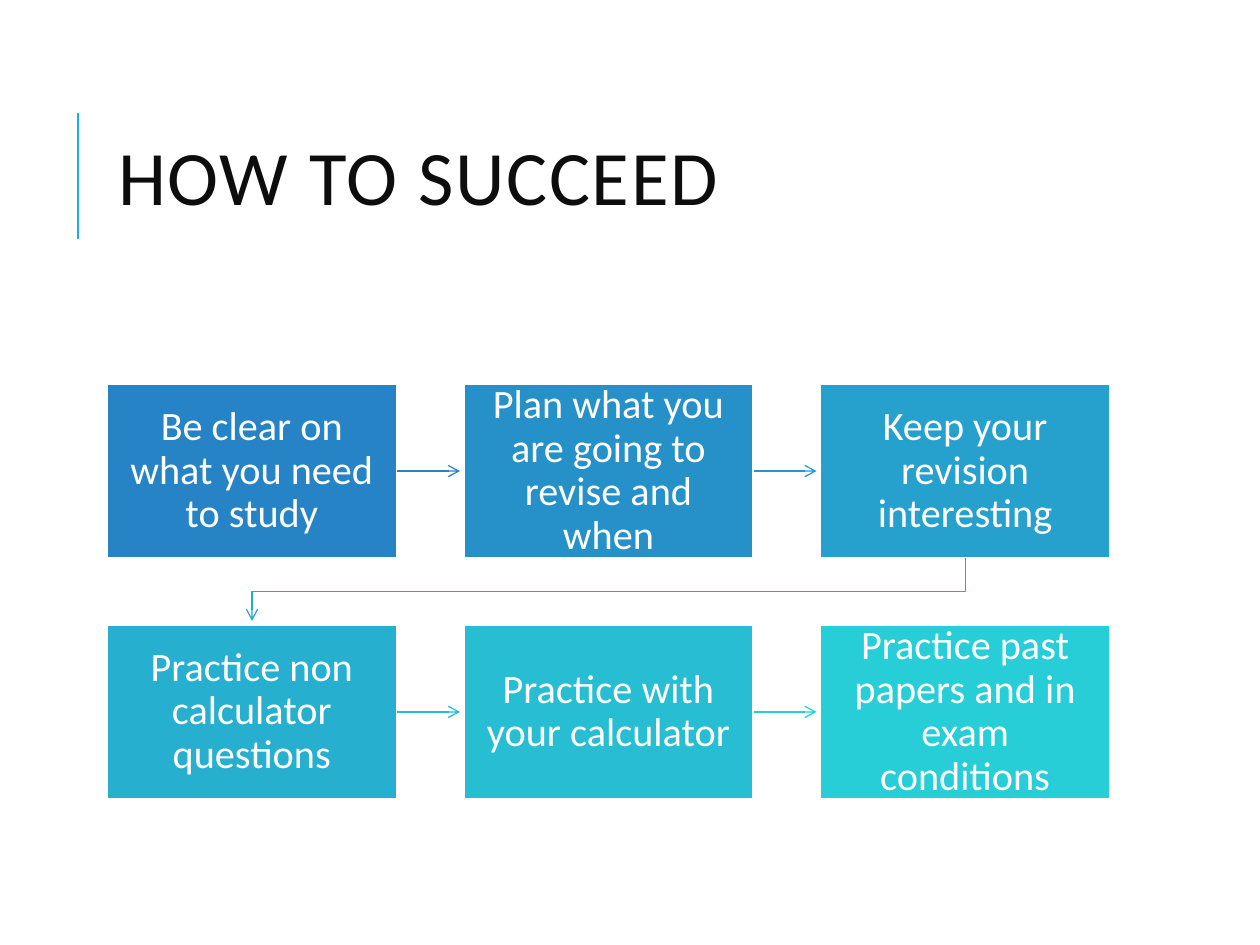
"""Build a slide with a title and six study steps joined by arrows."""
from dataclasses import dataclass

from lxml import etree
from pptx import Presentation
from pptx import util as u
from pptx.dml.color import RGBColor
from pptx.enum import shapes, text
from pptx.oxml.ns import qn

LEFT, TOP = 61.2, 219.6
WIDE, HIGH = 165.6, 99.2
STEP_X, STEP_Y = 203.8, 137.6
COLS = 3
REACH = 36


@dataclass(frozen=True)
class Step:
    words: str
    fill: str
    link: str = ""


STEPS = [
    Step("Be clear on what you need to study", "2683C6", "2683C6"),
    Step("Plan what you are going to revise and when", "2691C9", "2695CA"),
    Step("Keep your revision interesting", "26A0CD", "27A7CE"),
    Step("Practice non calculator questions", "27AFD0", "27BAD3"),
    Step("Practice with your calculator", "27BED4", "27CED7"),
    Step("Practice past papers and in exam conditions", "27CED7"),
]


def paint(part, shade: str) -> None:
    if hasattr(part, "solid"):
        part.solid()
        part.fore_color.rgb = RGBColor.from_string(shade)
    else:
        part.rgb = RGBColor.from_string(shade)


def write(frame, words: str, size: float, shade: str, space: float):
    frame.word_wrap = True
    frame.vertical_anchor = text.MSO_ANCHOR.MIDDLE
    frame.text = words
    para = frame.paragraphs[0]
    para.line_spacing = space
    font = para.runs[0].font
    font.name, font.size = "Calibri", u.Pt(size)
    paint(font.color, shade)
    return para


def stroke(item, shade: str, width: float, head: bool = False) -> None:
    paint(item.line.fill, shade)
    item.line.width = u.Pt(width)
    if head:
        etree.SubElement(item.line._get_or_add_ln(), qn("a:tailEnd"), type="arrow")


def join(slide, x1: float, y1: float, x2: float, y2: float):
    line = slide.shapes.add_connector(
        shapes.MSO_CONNECTOR.STRAIGHT, u.Pt(x1), u.Pt(y1), u.Pt(x2), u.Pt(y2))
    etree.SubElement(line._element.spPr, qn("a:effectLst"))
    return line


def add_title(slide) -> None:
    stroke(join(slide, 44.64, 136.8, 44.64, 64.8), "1CADE4", 1.5)
    box = slide.shapes.add_textbox(u.Pt(60.5), u.Pt(46), u.Pt(574), u.Pt(118))
    para = write(box.text_frame, "HOW TO SUCCEED", 44, "0D0D0D", 0.8)
    para.runs[0].font._element.set("spc", "100")


def add_box(slide, step: Step, x: float, y: float):
    box = slide.shapes.add_shape(
        shapes.MSO_SHAPE.RECTANGLE, u.Pt(x), u.Pt(y), u.Pt(WIDE), u.Pt(HIGH))
    box.shadow.inherit = False
    paint(box.fill, step.fill)
    stroke(box, "FFFFFF", 1.25)
    frame = box.text_frame
    frame.margin_left = frame.margin_right = u.Pt(8)
    frame.margin_top = frame.margin_bottom = u.Pt(8.5)
    para = write(frame, step.words, 23, "FFFFFF", 0.9)
    para.alignment = text.PP_ALIGN.CENTER
    return box


def add_link(slide, box, shade: str, x: float, y: float) -> None:
    edge, mid = x + WIDE, y + HIGH / 2
    line = join(slide, edge, mid, edge + REACH, mid)
    line.begin_connect(box, 3)
    stroke(line, shade, 0.75, head=True)


def add_turn(slide, shade: str, x: float, y: float) -> None:
    start, end, base = x + WIDE / 2, LEFT + WIDE / 2, y + HIGH
    turn = base + (STEP_Y - HIGH) / 2
    pen = slide.shapes.build_freeform(u.Pt(start), u.Pt(base))
    pen.add_line_segments(
        [(u.Pt(px), u.Pt(py)) for px, py in
         ((start, turn), (end, turn), (end, base + REACH))], close=False)
    line = pen.convert_to_shape()
    line.shadow.inherit = False
    line.fill.background()
    stroke(line, shade, 0.75, head=True)


def main() -> None:
    deck = Presentation()
    deck.slide_width, deck.slide_height = u.Pt(720), u.Pt(540)
    slide = deck.slides.add_slide(deck.slide_layouts[6])
    add_title(slide)
    for index, step in enumerate(STEPS):
        row, col = divmod(index, COLS)
        x, y = LEFT + col * STEP_X, TOP + row * STEP_Y
        box = add_box(slide, step, x, y)
        if step.link and col < COLS - 1:
            add_link(slide, box, step.link, x, y)
        elif step.link:
            add_turn(slide, step.link, x, y)
    deck.save("out.pptx")


if __name__ == "__main__":
    main()
